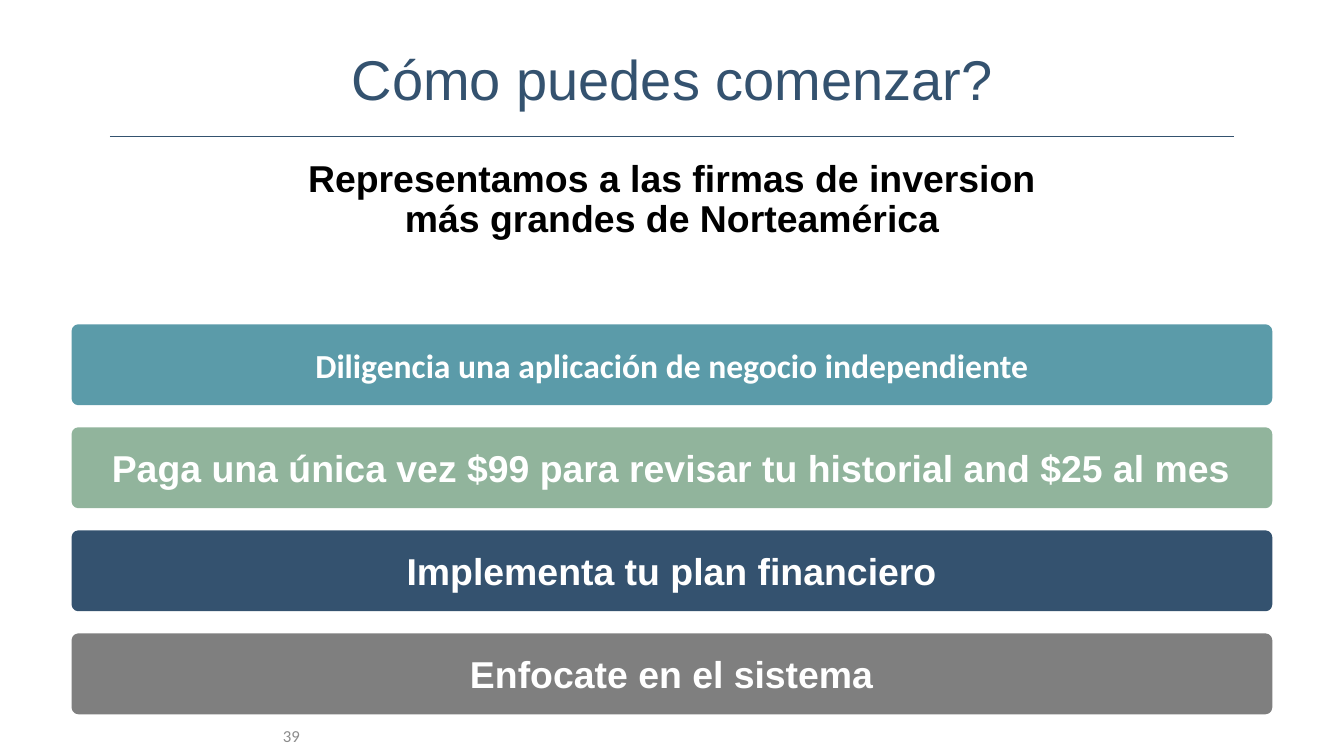
from dataclasses import dataclass

from lxml.etree import SubElement
from pptx import Presentation
from pptx.dml.color import RGBColor as Color
from pptx.enum.shapes import MSO_CONNECTOR as Connector, MSO_SHAPE as Shape
from pptx.enum.text import MSO_ANCHOR as Anchor, MSO_AUTO_SIZE as AutoSize, PP_ALIGN as Align
from pptx.oxml.ns import qn
from pptx.util import Pt


@dataclass(frozen=True)
class Theme:
    """Colours, fonts and type sizes of the deck."""
    navy: str = "34526F"
    teal: str = "5B9BA9"
    sage: str = "91B49C"
    grey: str = "7F7F7F"
    pale: str = "8C8C8C"
    black: str = "000000"
    white: str = "FFFFFF"
    main_font: str = "Arial"
    side_font: str = "Calibri"
    title_size: float = 40
    strong_size: float = 26.7
    step_size: float = 24
    number_size: float = 12


@dataclass(frozen=True)
class Box:
    """A rectangle in points."""
    left: float
    top: float
    width: float
    height: float


THEME = Theme()
STEPS = [
    ("Diligencia una aplicación de negocio independiente", THEME.teal, THEME.side_font, THEME.step_size),
    ("Paga una única vez $99 para revisar tu historial and $25 al mes", THEME.sage, THEME.main_font, THEME.strong_size),
    ("Implementa tu plan financiero", THEME.navy, THEME.main_font, THEME.strong_size),
    ("Enfocate en el sistema", THEME.grey, THEME.main_font, THEME.strong_size),
]


def place(shape, box):
    """Move a shape to a box."""
    shape.left, shape.top = Pt(box.left), Pt(box.top)
    shape.width, shape.height = Pt(box.width), Pt(box.height)


def write(shape, text, font, size, color, bold=False, align=Align.CENTER, anchor=Anchor.MIDDLE, spacing=1.0):
    """Fill a shape with one formatted paragraph."""
    frame = shape.text_frame
    frame.text = text
    frame.word_wrap = True
    frame.auto_size = AutoSize.NONE
    frame.vertical_anchor = anchor
    frame.margin_left = frame.margin_right = Pt(9.6)
    frame.margin_top = frame.margin_bottom = Pt(4.8)
    para = frame.paragraphs[0]
    para.alignment = align
    para.line_spacing = spacing
    para.space_before = para.space_after = Pt(0)
    for span in para.runs:
        span.font.name = font
        span.font.size = Pt(size)
        span.font.bold = bold
        span.font.color.rgb = Color.from_string(color)


def add_heading(page, box):
    """Set the title and the rule below it."""
    title = page.shapes.title
    place(title, Box(box.left, box.top, box.width, 53.3))
    write(title, "Cómo puedes comenzar?", THEME.main_font, THEME.title_size, THEME.navy,
          anchor=Anchor.TOP, spacing=0.85)
    inset, bottom = 3, box.top + box.height
    rule = page.shapes.add_connector(Connector.STRAIGHT, Pt(box.left + inset), Pt(bottom),
                                     Pt(box.left + box.width - inset), Pt(bottom))
    rule.line.color.rgb = Color.from_string(THEME.navy)
    rule.line.width = Pt(0.75)
    SubElement(rule._element.spPr, qn("a:effectLst"))


def add_statement(page, box):
    """Set the bold statement in the body placeholder."""
    body = page.placeholders[1]
    place(body, box)
    body.text_frame.text = ""
    write(body, "Representamos a las firmas de inversion más grandes de Norteamérica",
          THEME.main_font, THEME.strong_size, THEME.black, bold=True, anchor=Anchor.TOP, spacing=0.9)
    properties = body.text_frame.paragraphs[0]._p.get_or_add_pPr()
    properties.set("marL", "0")
    properties.set("indent", "0")
    SubElement(properties, qn("a:buNone"))


def add_steps(page, box, bar_height=54.7):
    """Stack the step bars evenly through the box."""
    pitch = (box.height - bar_height) / (len(STEPS) - 1)
    for index, (text, color, font, size) in enumerate(STEPS):
        bar = page.shapes.add_shape(Shape.ROUNDED_RECTANGLE, 0, 0, 0, 0)
        place(bar, Box(box.left, box.top + index * pitch, box.width, bar_height))
        bar.adjustments[0] = 0.06
        bar.shadow.inherit = False
        bar.fill.solid()
        bar.fill.fore_color.rgb = bar.line.color.rgb = Color.from_string(color)
        bar.line.width = Pt(3)
        write(bar, text, font, size, THEME.white, bold=True)


def add_page_number(page, box):
    """Set the page number at the right of its box."""
    number = page.shapes.add_textbox(0, 0, 0, 0)
    place(number, box)
    write(number, "39", THEME.side_font, THEME.number_size, THEME.pale, align=Align.RIGHT)


def main():
    """Build the slide and save it."""
    deck = Presentation()
    deck.slide_width, deck.slide_height = Pt(960), Pt(540)
    page = deck.slides.add_slide(deck.slide_layouts.get_by_name("Title and Content"))
    add_page_number(page, Box(0, 511.2, 223.9, 28.8))
    add_heading(page, Box(75.5, 34.5, 809, 63.2))
    add_statement(page, Box(197.3, 109.4, 566, 69.1))
    add_steps(page, Box(52.7, 233.2, 854.6, 275.5))
    deck.save("out.pptx")


if __name__ == "__main__":
    main()
